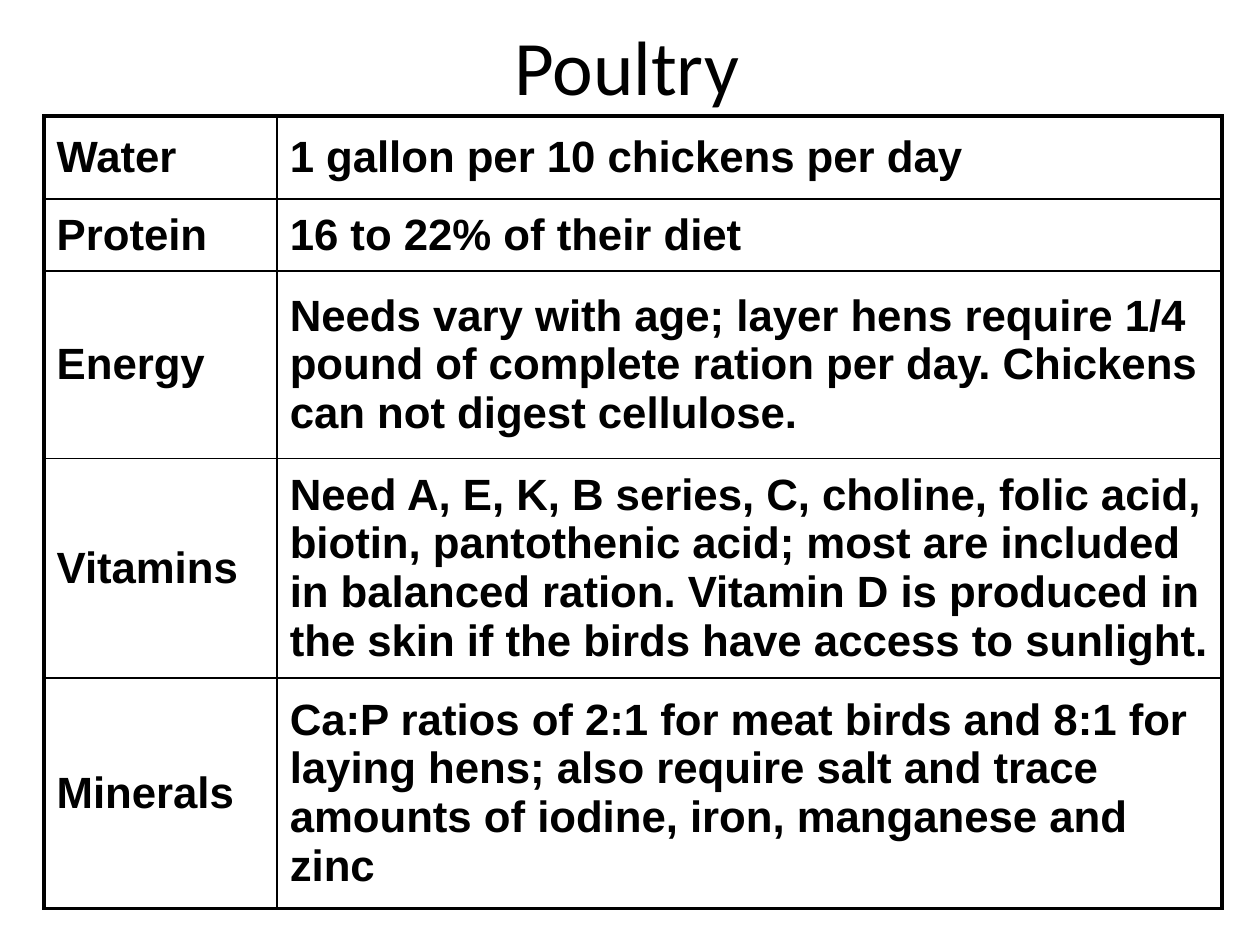
from dataclasses import dataclass

from lxml.etree import SubElement
from pptx import Presentation
from pptx.dml.color import RGBColor
from pptx.enum.text import MSO_ANCHOR, PP_ALIGN
from pptx.oxml.ns import qn
from pptx.util import Inches, Pt


@dataclass(frozen=True)
class Theme:
    ink: RGBColor = RGBColor(0, 0, 0)
    paper: RGBColor = RGBColor(255, 255, 255)
    title_font: str = "Calibri"
    body_font: str = "Arial"
    title_size: float = 44
    body_size: float = 25
    outer_line: float = 2.25
    inner_line: float = 1


THEME = Theme()
COLUMN_WIDTHS = (1.85, 7.5)
NUTRIENTS = (
    ("Water", "1 gallon per 10 chickens per day", 0.66),
    ("Protein", "16 to 22% of their diet", 0.57),
    ("Energy", "Needs vary with age; layer hens require 1/4 pound of complete "
     "ration per day. Chickens can not digest cellulose.", 1.49),
    ("Vitamins", "Need A, E, K, B series, C, choline, folic acid, biotin, "
     "pantothenic acid; most are included in balanced ration. Vitamin D is "
     "produced in the skin if the birds have access to sunlight.", 1.74),
    ("Minerals", "Ca:P ratios of 2:1 for meat birds and 8:1 for laying hens; "
     "also require salt and trace amounts of iodine, iron, manganese and zinc", 1.83),
)


def style_font(font, name, size, bold):
    font.name = name
    font.size = Pt(size)
    font.bold = bold
    font.color.rgb = THEME.ink


def add_title(slide, text, left, top, width, height):
    title = slide.shapes.title
    title.left, title.top = Inches(left), Inches(top)
    title.width, title.height = Inches(width), Inches(height)
    title.text_frame.text = text
    title.text_frame.vertical_anchor = MSO_ANCHOR.MIDDLE
    paragraph = title.text_frame.paragraphs[0]
    paragraph.alignment = PP_ALIGN.CENTER
    style_font(paragraph.runs[0].font, THEME.title_font, THEME.title_size, False)


def set_borders(cell, outer_sides):
    properties = cell._tc.get_or_add_tcPr()
    for index, side in enumerate(("lnL", "lnR", "lnT", "lnB")):
        weight = THEME.outer_line if side in outer_sides else THEME.inner_line
        line = properties.makeelement(qn(f"a:{side}"), {"w": str(Pt(weight))})
        fill = SubElement(line, qn("a:solidFill"))
        SubElement(fill, qn("a:srgbClr"), val=str(THEME.ink))
        properties.insert(index, line)


def fill_cell(cell, text, outer_sides):
    cell.text_frame.text = text
    cell.vertical_anchor = MSO_ANCHOR.MIDDLE
    cell.fill.solid()
    cell.fill.fore_color.rgb = THEME.paper
    paragraph = cell.text_frame.paragraphs[0]
    style_font(paragraph.runs[0].font, THEME.body_font, THEME.body_size, True)
    set_borders(cell, outer_sides)


def add_nutrient_table(slide, left, top, width, height):
    table = slide.shapes.add_table(
        len(NUTRIENTS), len(COLUMN_WIDTHS),
        Inches(left), Inches(top), Inches(width), Inches(height)).table
    table.first_row = False
    table.horz_banding = False
    for column, column_width in zip(table.columns, COLUMN_WIDTHS):
        column.width = Inches(column_width)
    last_row = len(NUTRIENTS) - 1
    for row, (nutrient, need, row_height) in enumerate(NUTRIENTS):
        table.rows[row].height = Inches(row_height)
        ends = {"lnT"} if row == 0 else {"lnB"} if row == last_row else set()
        fill_cell(table.cell(row, 0), nutrient, ends | {"lnL"})
        fill_cell(table.cell(row, 1), need, ends | {"lnR"})


def main():
    presentation = Presentation()
    presentation.slide_width = Inches(10)
    presentation.slide_height = Inches(7.5)
    slide = presentation.slides.add_slide(presentation.slide_layouts[5])
    add_title(slide, "Poultry", 0.33, 0, 9.29, 1.03)
    add_nutrient_table(slide, 0.35, 0.92, sum(COLUMN_WIDTHS),
                       sum(row_height for _, _, row_height in NUTRIENTS))
    presentation.save("out.pptx")


if __name__ == "__main__":
    main()
